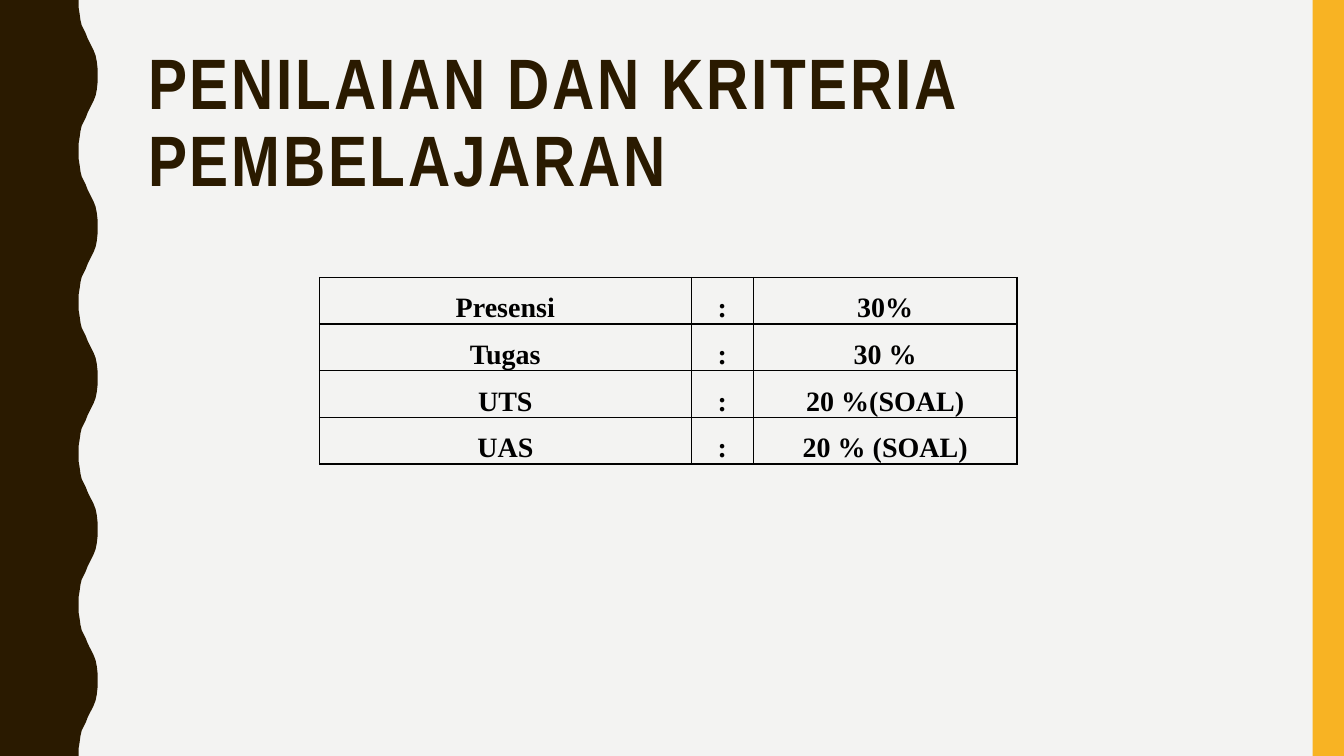
import pptx
import pptx.dml.color
import pptx.enum.shapes
import pptx.enum.text
import pptx.oxml
import pptx.oxml.ns
import pptx.util

Cm = pptx.util.Cm
Pt = pptx.util.Pt
BROWN, AMBER, PAPER, BLACK = "2A1A00", "F8B323", "F3F3F2", "000000"
HALF_WAVE = [(0, 0), (0, 0.18), (0.03, 0.36), (0.05, 0.51), (0.08, 0.64),
             (0.13, 0.74), (0.18, 0.84), (0.23, 0.97), (0.28, 1.07),
             (0.33, 1.17), (0.38, 1.27), (0.43, 1.4), (0.46, 1.55),
             (0.48, 1.73), (0.48, 1.91)]
WAVES = 5
GRADES = [("Presensi", ":", "30%"),
          ("Tugas", ":", "30 %"),
          ("UTS", ":", "20 %(SOAL)"),
          ("UAS", ":", "20 % (SOAL)")]


def rgb(value):
    """Return the colour of a hex string."""
    return pptx.dml.color.RGBColor.from_string(value)


def paint(sp, colour):
    """Fill a shape with one colour, without outline or shadow."""
    sp.fill.solid()
    sp.fill.fore_color.rgb = rgb(colour)
    sp.line.fill.background()
    sp.shadow.inherit = False


def style(p, name, size, colour):
    """Set the bold font of a paragraph."""
    p.font.name = name
    p.font.size = Pt(size)
    p.font.bold = True
    p.font.color.rgb = rgb(colour)


def add_wavy_band(s, left, top, width, height):
    """Draw a band whose right edge is a row of equal waves."""
    period = height / WAVES
    trough = left + width - HALF_WAVE[-1][0]
    wave = HALF_WAVE + [(x, period - y) for x, y in HALF_WAVE[-2::-1]]
    edge = [(trough + x, top + i * period + y)
            for i in range(WAVES) for x, y in wave]
    points = edge + [(left, top + height)]
    builder = s.shapes.build_freeform(Cm(left), Cm(top))
    builder.add_line_segments([(Cm(x), Cm(y)) for x, y in points], close=True)
    paint(builder.convert_to_shape(), BROWN)


def add_side_bar(s, left, top, width, height):
    """Draw the plain bar at the right edge."""
    sp = s.shapes.add_shape(pptx.enum.shapes.MSO_SHAPE.RECTANGLE,
                            Cm(left), Cm(top), Cm(width), Cm(height))
    paint(sp, AMBER)


def fill_title(s, text, left, top, width, height):
    """Place and format the title placeholder."""
    sp = s.shapes.title
    sp.left, sp.top, sp.width, sp.height = map(Cm, (left, top, width, height))
    tf = sp.text_frame
    tf.text = text
    tf.word_wrap = True
    tf.auto_size = pptx.enum.text.MSO_AUTO_SIZE.NONE
    tf.vertical_anchor = pptx.enum.text.MSO_ANCHOR.MIDDLE
    p = tf.paragraphs[0]
    p.alignment = pptx.enum.text.PP_ALIGN.LEFT
    p.line_spacing = 0.9
    style(p, "Arial Narrow", 51, BROWN)
    p.runs[0].font._element.set("spc", "200")


def add_borders(cell):
    """Give a cell thin black lines on all four sides."""
    tcPr = cell._tc.get_or_add_tcPr()
    for side in ("lnL", "lnR", "lnT", "lnB"):
        tcPr.append(pptx.oxml.parse_xml(
            f'<a:{side} {pptx.oxml.ns.nsdecls("a")} w="12700"><a:solidFill>'
            f'<a:srgbClr val="{BLACK}"/></a:solidFill></a:{side}>'))


def fill_cell(cell, text):
    """Write one centred table cell."""
    add_borders(cell)
    cell.fill.background()
    cell.margin_left = cell.margin_right = Cm(0.18)
    cell.margin_top = cell.margin_bottom = 0
    cell.vertical_anchor = pptx.enum.text.MSO_ANCHOR.MIDDLE
    cell.text = text
    p = cell.text_frame.paragraphs[0]
    p.alignment = pptx.enum.text.PP_ALIGN.CENTER
    p.line_spacing = 1.5
    style(p, "Times New Roman", 20, BLACK)


def add_grades(s, left, top, width, height):
    """Draw the table of grade weights."""
    table = s.shapes.add_table(len(GRADES), 3, Cm(left), Cm(top),
                               Cm(width), Cm(height)).table
    table.first_row = table.horz_banding = False
    label, colon = 9.37, 1.57
    for column, size in zip(table.columns, (label, colon, width - label - colon)):
        column.width = Cm(size)
    for i, row in enumerate(GRADES):
        for j, text in enumerate(row):
            fill_cell(table.cell(i, j), text)


def main():
    """Build and save the slide."""
    prs = pptx.Presentation()
    width, height = 33.87, 19.05
    prs.slide_width, prs.slide_height = Cm(width), Cm(height)
    s = prs.slides.add_slide(prs.slide_layouts[5])
    s.background.fill.solid()
    s.background.fill.fore_color.rgb = rgb(PAPER)
    add_wavy_band(s, 0, 0, 2.46, height)
    add_side_bar(s, width - 0.79, 0, 0.79, height)
    fill_title(s, "PENILAIAN DAN KRITERIA PEMBELAJARAN", 3.48, 1.07, 28.27, 4.14)
    add_grades(s, 8.05, 6.99, 17.58, 4.47)
    prs.save("out.pptx")


if __name__ == "__main__":
    main()
